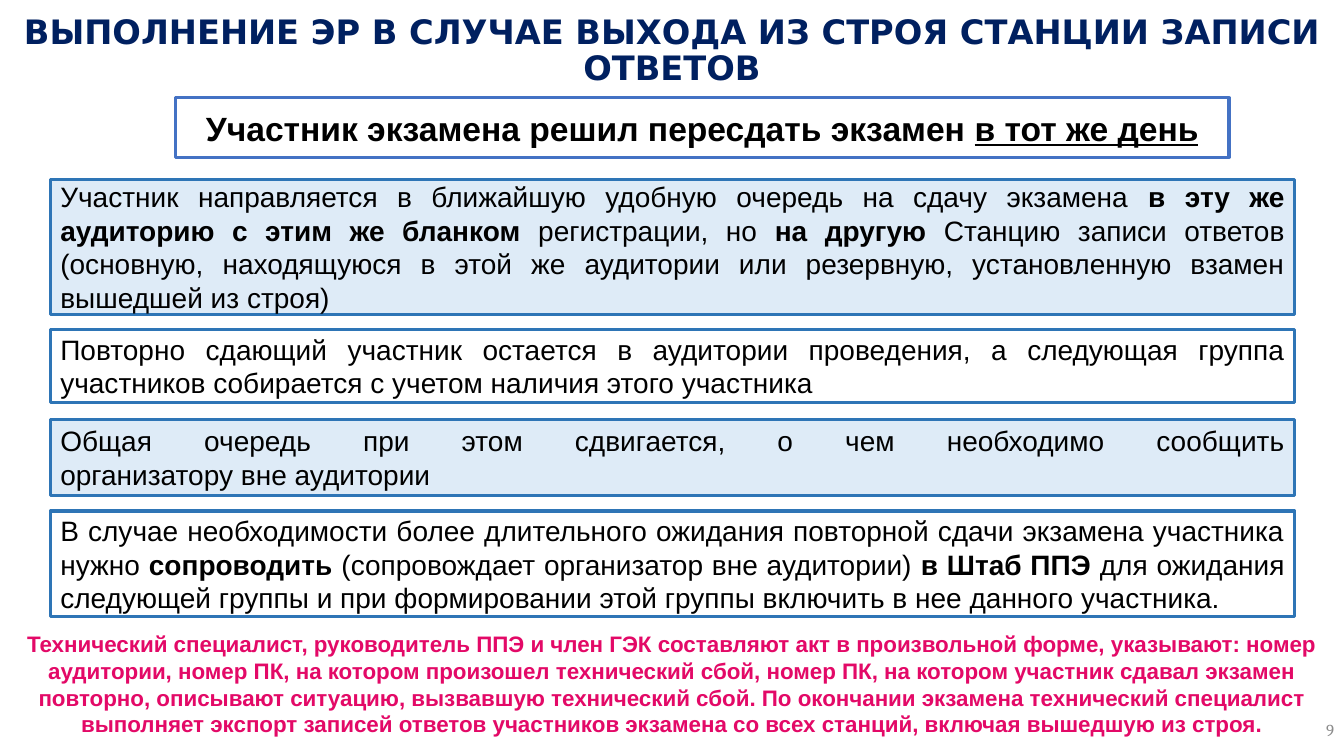
from dataclasses import dataclass

from pptx import Presentation
from pptx.dml.color import RGBColor
from pptx.enum.shapes import MSO_SHAPE
from pptx.enum.text import MSO_ANCHOR as ANCHOR, MSO_AUTO_SIZE as AUTO, PP_ALIGN as ALIGN
from pptx.shapes.autoshape import Shape
from pptx.slide import Slide
from pptx.text.text import TextFrame
from pptx.util import Inches, Pt

COLORS = {
    "white": "FFFFFF",
    "black": "000000",
    "navy": "002060",
    "pale": "DEEBF7",
    "blue": "2E75B6",
    "header": "4472C4",
    "pink": "E30967",
    "gray": "8C8C8C",
}


@dataclass
class Run:
    text: str
    bold: bool = False
    underline: bool = False


@dataclass
class Box:
    top: float
    height: float
    runs: list[Run]
    fill: str | None = None
    line: str = "blue"
    left: float = 0.5
    width: float = 12.34
    size: int = 20
    align: ALIGN = ALIGN.JUSTIFY


BOXES = [
    Box(0.97, 0.59, [
        Run("Участник экзамена решил пересдать экзамен ", bold=True),
        Run("в тот же день", bold=True, underline=True),
    ], fill="white", line="header", left=1.74, width=10.45, size=24, align=ALIGN.CENTER),
    Box(1.78, 1.34, [
        Run("Участник направляется в ближайшую удобную очередь на сдачу экзамена "),
        Run("в эту же аудиторию с этим же бланком ", bold=True),
        Run("регистрации, но "),
        Run("на другую ", bold=True),
        Run("Станцию записи ответов (основную, находящуюся в этой же аудитории "
            "или резервную, установленную взамен вышедшей из строя)"),
    ], fill="pale"),
    Box(3.27, 0.72, [
        Run("Повторно сдающий участник остается в аудитории проведения, а следующая "
            "группа участников собирается с учетом наличия этого участника"),
    ]),
    Box(4.16, 0.76, [
        Run("Общая очередь при этом сдвигается, о чем необходимо сообщить\n"
            "организатору вне аудитории"),
    ], fill="pale"),
    Box(5.07, 1.05, [
        Run("В случае необходимости более длительного ожидания повторной сдачи "
            "экзамена участника нужно "),
        Run("сопроводить", bold=True),
        Run(" (сопровождает организатор вне аудитории) "),
        Run("в Штаб ППЭ ", bold=True),
        Run("для ожидания следующей группы и при формировании этой группы "
            "включить в нее данного участника."),
    ]),
]

TITLE = "ВЫПОЛНЕНИЕ ЭР В СЛУЧАЕ ВЫХОДА ИЗ СТРОЯ СТАНЦИИ ЗАПИСИ ОТВЕТОВ"
FOOTNOTE = (
    "Технический специалист, руководитель ППЭ и член ГЭК составляют акт в произвольной "
    "форме, указывают: номер аудитории, номер ПК, на котором произошел технический сбой, "
    "номер ПК, на котором участник сдавал экзамен повторно, описывают ситуацию, вызвавшую "
    "технический сбой. По окончании экзамена технический специалист выполняет экспорт "
    "записей ответов участников экзамена со всех станций, включая вышедшую из строя."
)


def rgb(name: str) -> RGBColor:
    return RGBColor.from_string(COLORS[name])


def write(tf: TextFrame, runs: list[Run], *, size: int, color: str = "black",
          font: str = "Arial", align: ALIGN = ALIGN.CENTER,
          anchor: ANCHOR = ANCHOR.MIDDLE, spacing: float = 1.0) -> None:
    tf.word_wrap = True
    tf.auto_size = AUTO.NONE
    tf.vertical_anchor = anchor
    p = tf.paragraphs[0]
    p.alignment = align
    p.line_spacing = spacing
    for run in runs:
        for i, text in enumerate(run.text.split("\n")):
            if i:
                p.add_line_break()
            r = p.add_run()
            r.text = text
            r.font.name = font
            r.font.size = Pt(size)
            r.font.bold = run.bold
            r.font.underline = run.underline
            r.font.color.rgb = rgb(color)


def draw_box(s: Slide, box: Box) -> Shape:
    sp = s.shapes.add_shape(MSO_SHAPE.RECTANGLE, Inches(box.left), Inches(box.top),
                            Inches(box.width), Inches(box.height))
    sp.shadow.inherit = False
    if box.fill:
        sp.fill.solid()
        sp.fill.fore_color.rgb = rgb(box.fill)
    else:
        sp.fill.background()
    sp.line.color.rgb = rgb(box.line)
    sp.line.width = Pt(2.25)
    write(sp.text_frame, box.runs, size=box.size, align=box.align)
    return sp


def main() -> None:
    prs = Presentation()
    prs.slide_width, prs.slide_height = Inches(13.33), Inches(7.5)
    s = prs.slides.add_slide(prs.slide_layouts[5])

    title = s.shapes.title
    title.left, title.top = Inches(0), Inches(0.32)
    title.width, title.height = Inches(13.33), Inches(0.75)
    title.text_frame.margin_bottom = Inches(0.41)
    write(title.text_frame, [Run(TITLE, bold=True)], size=24, color="navy",
          font="DejaVu Sans", spacing=0.9)

    for box in BOXES:
        draw_box(s, box)

    footnote = s.shapes.add_textbox(Inches(0), Inches(6.2), Inches(13.33), Inches(1.18))
    write(footnote.text_frame, [Run(FOOTNOTE, bold=True)], size=16, color="pink",
          anchor=ANCHOR.TOP)

    number = s.shapes.add_textbox(Inches(10.33), Inches(7.04), Inches(3), Inches(0.4))
    write(number.text_frame, [Run("9")], size=12, color="gray", font="Cambria",
          align=ALIGN.RIGHT)

    prs.save("out.pptx")


if __name__ == "__main__":
    main()
